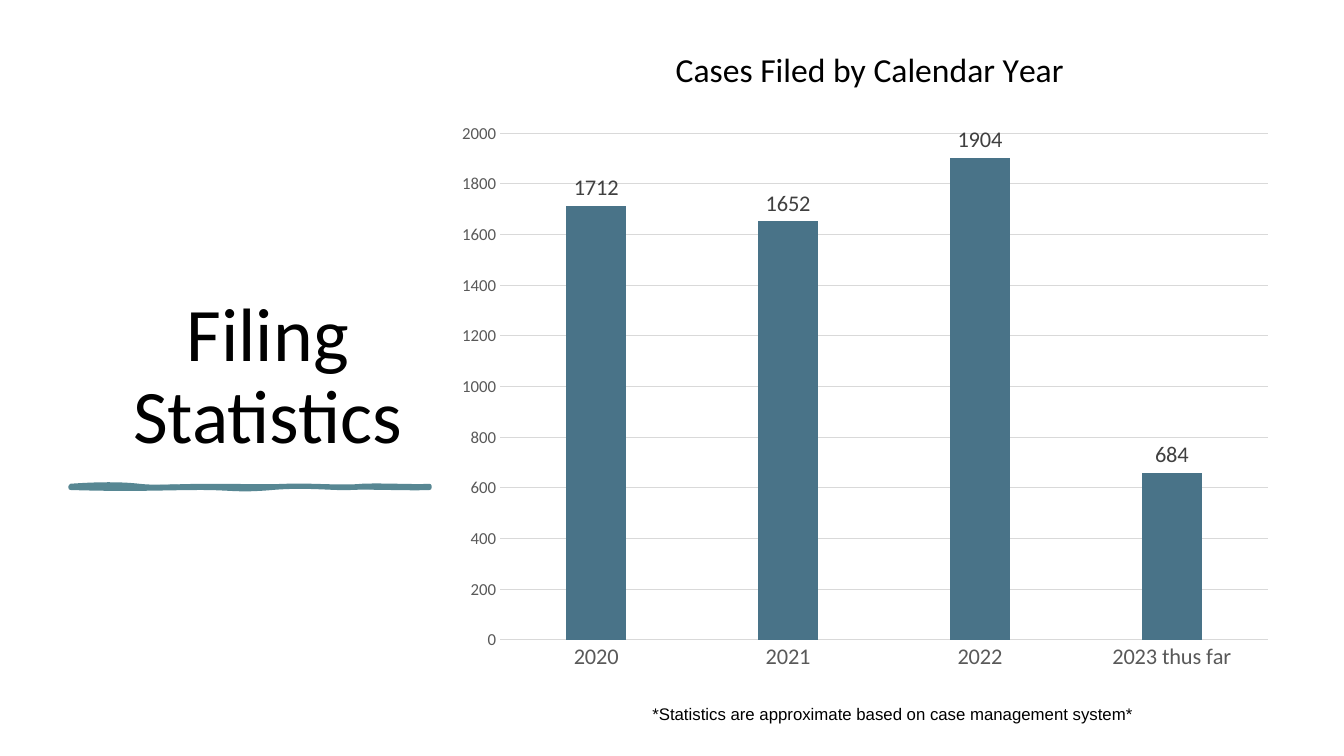
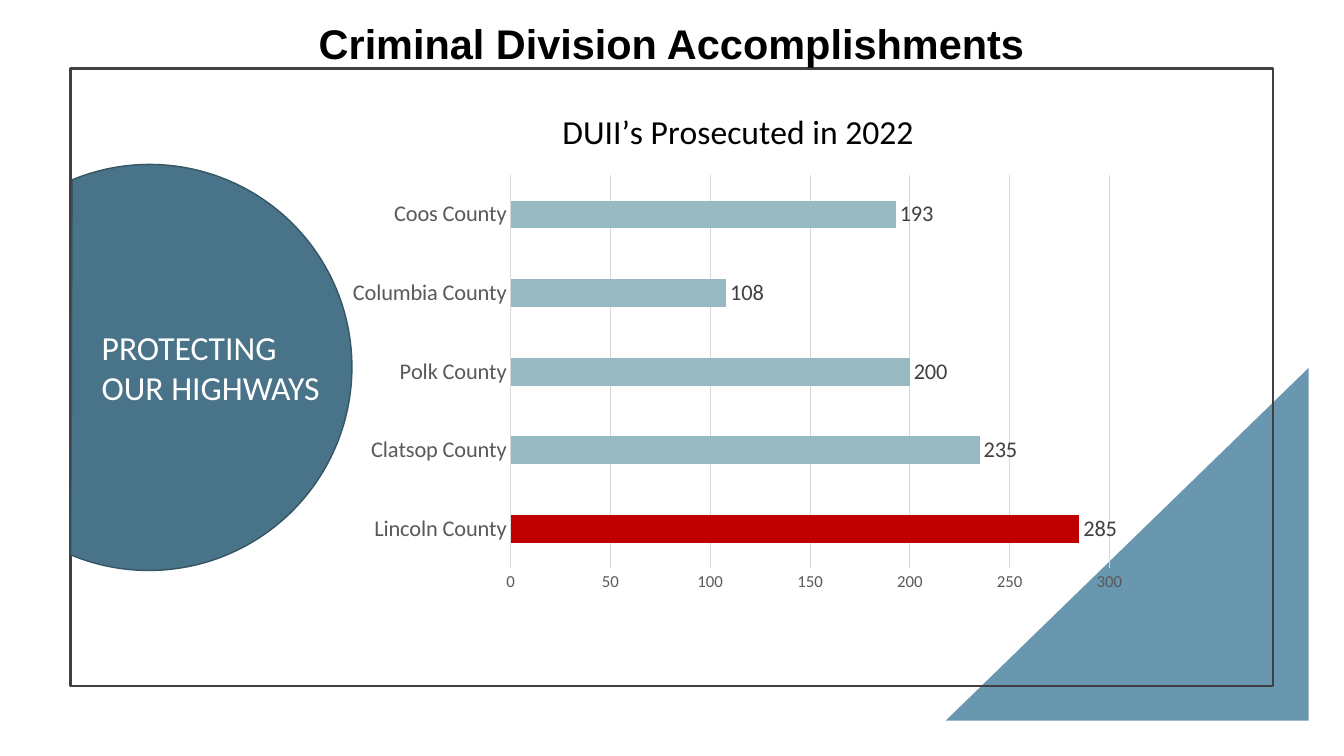
import dataclasses

import lxml.etree
import pptx
import pptx.chart.data
import pptx.dml.color
import pptx.enum.chart
import pptx.enum.shapes
import pptx.enum.text
import pptx.oxml.ns
import pptx.util

Inches = pptx.util.Inches
Pt = pptx.util.Pt
qn = pptx.oxml.ns.qn
Shapes = pptx.enum.shapes.MSO_SHAPE
ChartType = pptx.enum.chart.XL_CHART_TYPE
Tick = pptx.enum.chart.XL_TICK_MARK
LabelPosition = pptx.enum.chart.XL_LABEL_POSITION
Align = pptx.enum.text.PP_ALIGN
Anchor = pptx.enum.text.MSO_ANCHOR


@dataclasses.dataclass(frozen=True)
class Theme:
    black: str = "000000"
    white: str = "FFFFFF"
    navy: str = "497388"
    navy_edge: str = "365565"
    steel: str = "6997AF"
    pale: str = "97B9C1"
    teal: str = "578793"
    red: str = "C00000"
    dark: str = "404040"
    gray: str = "595959"
    grid: str = "D9D9D9"
    body_font: str = "Calibri"
    plain_font: str = "Arial"
    display: float = 54
    heading: float = 29.6
    subtitle: float = 24
    label: float = 16
    small: float = 12


THEME = Theme()


def rgb(value):
    return pptx.dml.color.RGBColor.from_string(value)


def apply(target, values):
    for name, value in values.items():
        setattr(target, name, value)


def set_font(font, size, color, name=THEME.body_font, bold=False):
    apply(font, {"size": Pt(size), "name": name, "bold": bold})
    font.color.rgb = rgb(color)


def set_line(line, color, width):
    if color is None:
        line.fill.background()
        return
    line.color.rgb = rgb(color)
    line.width = Pt(width)


def place(parent, index, **fractions):
    """Give a chart title or plot area a manual position, in fractions of the chart."""
    for old in parent.findall(qn("c:layout")):
        parent.remove(old)
    layout = lxml.etree.Element(qn("c:layout"))
    manual = lxml.etree.SubElement(layout, qn("c:manualLayout"))
    settings = {"xMode": "edge", "yMode": "edge", **fractions}
    if "w" in fractions:
        settings = {"layoutTarget": "inner", **settings}
    for tag, value in settings.items():
        lxml.etree.SubElement(manual, qn("c:" + tag)).set("val", str(value))
    parent.insert(index, layout)


class Deck:
    def __init__(self, theme):
        self.theme = theme
        self.presentation = pptx.Presentation()
        apply(self.presentation, {"slide_width": Inches(13.33), "slide_height": Inches(7.5)})
        self.slide = None

    def new_slide(self):
        self.slide = self.presentation.slides.add_slide(self.presentation.slide_layouts[6])

    def style(self, shape, fill, line, width):
        shape.shadow.inherit = False
        if fill:
            shape.fill.solid()
            shape.fill.fore_color.rgb = rgb(fill)
        else:
            shape.fill.background()
        set_line(shape.line, line, width)
        return shape

    def shape(self, kind, box, fill=None, line=None, width=1):
        shape = self.slide.shapes.add_shape(kind, *map(Inches, box))
        return self.style(shape, fill, line, width)

    def curves(self, start, strands, color, width):
        """Draw closed chains of cubic curves as one shape; each strand is (settings, curves)."""
        anchors = [tuple(map(Inches, curve[-1])) for curve in strands[0][1]]
        builder = self.slide.shapes.build_freeform(*map(Inches, start))
        builder.add_line_segments(anchors, close=True)
        shape = self.style(builder.convert_to_shape(), color, color, width)
        frame = next(shape._element.iter(qn("a:path")))
        size = dict(frame.attrib)
        holder = frame.getparent()
        holder.remove(frame)
        for settings, chain in strands:
            strand = lxml.etree.SubElement(holder, qn("a:path"), {**size, **settings})
            for tag, points in [("a:moveTo", [start]), *(("a:cubicBezTo", c) for c in chain)]:
                segment = lxml.etree.SubElement(strand, qn(tag))
                for x, y in points:
                    lxml.etree.SubElement(segment, qn("a:pt"), x=str(Inches(x) - shape.left),
                                          y=str(Inches(y) - shape.top))
            lxml.etree.SubElement(strand, qn("a:close"))

    def text(self, box, words, size, color, font=THEME.body_font, bold=False,
             anchor=Anchor.TOP, **paragraph_format):
        frame = self.slide.shapes.add_textbox(*map(Inches, box)).text_frame
        apply(frame, {"word_wrap": True, "vertical_anchor": anchor})
        paragraph = frame.paragraphs[0]
        apply(paragraph, paragraph_format)
        run = paragraph.add_run()
        run.text = words
        set_font(run.font, size, color, font, bold)

    def chart(self, kind, box, title, values, plot_box, title_at, axis_max, axis_step,
              gap, overlap=0, point_colors=(), label_texts=None):
        theme = self.theme
        data = pptx.chart.data.CategoryChartData()
        data.categories = list(values)
        data.add_series("Series 1", list(values.values()))
        chart = self.slide.shapes.add_chart(kind, *map(Inches, box), data).chart
        chart.has_legend = False
        set_font(chart.font, 10, theme.black)

        heading = chart.chart_title.text_frame.paragraphs[0].add_run()
        heading.text = title
        set_font(heading.font, theme.subtitle, theme.black)
        chart.chart_title.include_in_layout = False
        place(chart.chart_title._element, 1, **title_at)
        place(chart._chartSpace.chart.plotArea, 0, **plot_box)

        for axis, size in ((chart.category_axis, theme.label), (chart.value_axis, theme.small)):
            apply(axis, {"major_tick_mark": Tick.NONE, "minor_tick_mark": Tick.NONE})
            set_font(axis.tick_labels.font, size, theme.gray)
        set_line(chart.category_axis.format.line, theme.grid, 0.75)
        set_line(chart.value_axis.format.line, None, 0)
        set_line(chart.value_axis.major_gridlines.format.line, theme.grid, 0.75)
        apply(chart.value_axis, {"minimum_scale": 0, "maximum_scale": axis_max,
                                 "major_unit": axis_step})

        plot = chart.plots[0]
        apply(plot, {"gap_width": gap, "overlap": overlap, "vary_by_categories": False})
        bars = plot.series[0]
        for index, color in [(None, theme.navy), *enumerate(point_colors)]:
            target = bars if index is None else bars.points[index]
            target.format.fill.solid()
            target.format.fill.fore_color.rgb = rgb(color)
        labels = bars.data_labels
        apply(labels, {"show_value": True, "position": LabelPosition.OUTSIDE_END})
        set_font(labels.font, theme.label, theme.dark)
        for index, words in (label_texts or {}).items():
            label = bars.points[index].data_label
            run = label.text_frame.paragraphs[0].add_run()
            run.text = words
            set_font(run.font, theme.label, theme.dark)
            label.position = LabelPosition.OUTSIDE_END


def brush_underline(deck):
    """Draw a hand-drawn rule: a stroked strand and a filled one."""
    start = (0.7, 4.82)
    end_cap = ((4.26, 4.83), (4.26, 4.84), (4.26, 4.84))
    start_cap = ((0.7, 4.84), (0.7, 4.83), start)
    stroked = [
        ((0.97, 4.8), (1.21, 4.8), (1.38, 4.82)),
        ((1.55, 4.84), (1.77, 4.82), (2.09, 4.82)),
        ((2.41, 4.82), (2.6, 4.83), (2.84, 4.82)),
        ((3.08, 4.81), (3.39, 4.84), (3.59, 4.82)),
        ((3.79, 4.81), (4.12, 4.83), (4.26, 4.82)),
        end_cap,
        ((4.08, 4.85), (3.64, 4.83), (3.48, 4.84)),
        ((3.32, 4.85), (3.04, 4.81), (2.7, 4.84)),
        ((2.35, 4.87), (2.31, 4.84), (1.99, 4.84)),
        ((1.66, 4.84), (1.32, 4.86), (0.7, 4.84)),
        start_cap,
    ]
    filled = [
        ((1.02, 4.84), (1.1, 4.83), (1.38, 4.82)),
        ((1.66, 4.81), (1.69, 4.8), (1.99, 4.82)),
        ((2.28, 4.84), (2.61, 4.83), (2.77, 4.82)),
        ((2.93, 4.81), (3.27, 4.85), (3.44, 4.82)),
        ((3.62, 4.8), (3.97, 4.86), (4.26, 4.82)),
        end_cap,
        ((4.12, 4.84), (3.72, 4.87), (3.55, 4.84)),
        ((3.38, 4.82), (3.09, 4.84), (2.77, 4.84)),
        ((2.44, 4.84), (2.4, 4.83), (2.16, 4.84)),
        ((1.93, 4.85), (1.79, 4.83), (1.45, 4.84)),
        ((1.11, 4.85), (0.92, 4.84), (0.7, 4.84)),
        start_cap,
    ]
    deck.curves(start, [({"fill": "none"}, stroked), ({"stroke": "0"}, filled)],
                deck.theme.teal, 3)


def filing_statistics(deck):
    theme = deck.theme
    deck.new_slide()
    deck.text((0.7, 0.7, 3.91, 3.91), "Filing Statistics", theme.display, theme.black,
              anchor=Anchor.BOTTOM, alignment=Align.CENTER, line_spacing=0.9, space_after=Pt(6))
    brush_underline(deck)
    deck.chart(ChartType.COLUMN_CLUSTERED, (4.42, 0.41, 8.32, 6.38),
               "Cases Filed by Calendar Year",
               {"2020": 1712, "2021": 1652, "2022": 1904, "2023 thus far": 659},
               plot_box={"x": 0.065, "y": 0.143, "w": 0.915, "h": 0.788},
               title_at={"x": 0.267, "y": -0.003},
               axis_max=2000, axis_step=200, gap=219, overlap=-27,
               label_texts={1: "1652", 3: "684"})
    deck.text((5.46, 6.93, 6.79, 0.3),
              "*Statistics are approximate based on case management system*",
              theme.small, theme.black, theme.plain_font, alignment=Align.CENTER)


def highway_protection(deck):
    theme = deck.theme
    deck.new_slide()
    corner = deck.shape(Shapes.RIGHT_TRIANGLE, (9.38, 3.65, 3.6, 3.5), fill=theme.steel)
    corner._element.spPr.xfrm.set("flipH", "1")
    deck.shape(Shapes.RECTANGLE, (0.7, 0.68, 11.93, 6.13), line=theme.dark, width=1.5)
    deck.text((0.7, 0.2, 11.93, 0.52), "Criminal Division Accomplishments", theme.heading,
              theme.black, theme.plain_font, bold=True, anchor=Anchor.BOTTOM,
              alignment=Align.CENTER, line_spacing=0.8, space_after=Pt(6))
    badge = deck.shape(Shapes.CHORD, (-0.53, 1.63, 4.02, 4.03),
                       fill=theme.navy, line=theme.navy_edge)
    badge.rotation = 202.7
    deck.text((0.91, 3.19, 2.52, 0.91), "PROTECTING OUR HIGHWAYS", theme.subtitle, theme.white)
    deck.chart(ChartType.BAR_CLUSTERED, (3.34, 0.87, 7.95, 5.11), "DUII’s Prosecuted in 2022",
               {"Lincoln County": 285, "Clatsop County": 235, "Polk County": 200,
                "Columbia County": 108, "Coos County": 193},
               plot_box={"x": 0.217, "y": 0.17, "w": 0.747, "h": 0.763},
               title_at={"x": 0.274, "y": 0.03},
               axis_max=300, axis_step=50, gap=182,
               point_colors=[theme.red] + [theme.pale] * 4)


def main():
    deck = Deck(THEME)
    filing_statistics(deck)
    highway_protection(deck)
    deck.presentation.save("out.pptx")


if __name__ == "__main__":
    main()
